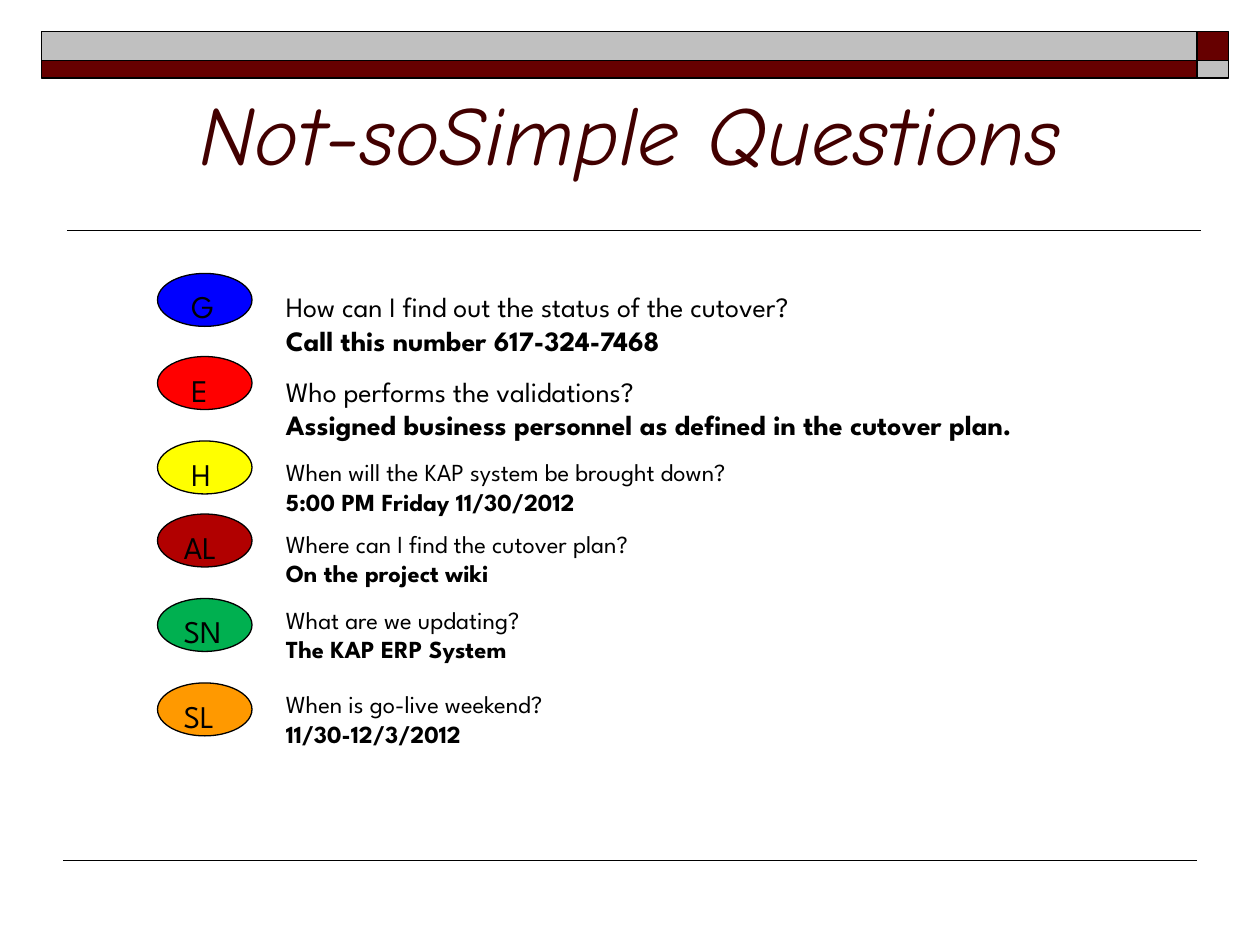
"""Build the cutover question-and-answer slide."""
from dataclasses import dataclass

from lxml import etree
from pptx import Presentation
from pptx import util as u
from pptx.dml.color import RGBColor
from pptx.enum import shapes, text
from pptx.oxml.ns import qn


@dataclass(frozen=True)
class Theme:
    """Colours, fonts and type sizes."""
    ink: str = "000000"
    maroon: str = "660000"
    silver: str = "C0C0C0"
    title_ink: str = "420000"
    title_font: str = "Comic Neue"
    body_font: str = "League Spartan"
    title_size: int = 48
    badge_size: int = 18
    large: int = 16
    small: int = 14


class SlideBuilder:
    """Draw styled elements on one slide."""

    def __init__(self, slide, theme):
        self.slide = slide
        self.theme = theme

    def add_run(self, paragraph, wording, size, font=None, color=None, bold=None, italic=None):
        """Append one styled run."""
        run = paragraph.add_run()
        run.text = wording
        run.font.size = u.Pt(size)
        run.font.name = font or self.theme.body_font
        run.font.color.rgb = RGBColor.from_string(color or self.theme.ink)
        run.font.bold = bold
        run.font.italic = italic

    def shape(self, kind, left, top, width, height, fill, weight):
        """Add an outlined, filled shape."""
        outline = self.slide.shapes.add_shape(kind, *map(u.Inches, (left, top, width, height)))
        outline.shadow.inherit = False
        outline.fill.solid()
        outline.fill.fore_color.rgb = RGBColor.from_string(fill)
        outline.line.color.rgb = RGBColor.from_string(self.theme.ink)
        outline.line.width = u.Pt(weight)
        return outline

    def rule(self, left, right, y, weight):
        """Add a horizontal line."""
        line = self.slide.shapes.add_connector(
            shapes.MSO_CONNECTOR.STRAIGHT, *map(u.Inches, (left, y, right, y)))
        line.line.color.rgb = RGBColor.from_string(self.theme.ink)
        line.line.width = u.Pt(weight)
        etree.SubElement(line._element.spPr, qn("a:effectLst"))

    def text_frame(self, left, top, width, height):
        """Add a wrapping text box and return its frame."""
        frame = self.slide.shapes.add_textbox(
            *map(u.Inches, (left, top, width, height))).text_frame
        frame.word_wrap = True
        return frame

    def title(self, wording):
        """Add the centred slide title."""
        frame = self.text_frame(0.5, 0.25, 9, 1.25)
        frame.vertical_anchor = text.MSO_ANCHOR.BOTTOM
        heading = frame.paragraphs[0]
        heading.alignment = text.PP_ALIGN.CENTER
        self.add_run(heading, wording, self.theme.title_size, self.theme.title_font,
                     self.theme.title_ink, italic=True)

    def badge(self, letters, top, fill):
        """Add a coloured category oval."""
        oval = self.shape(shapes.MSO_SHAPE.OVAL, 1.25, top, 0.75, 0.42, fill, 0.75)
        frame = oval.text_frame
        frame.vertical_anchor = text.MSO_ANCHOR.TOP
        frame.margin_left = u.Inches(0.16 if len(letters) == 1 else 0.1)
        label = frame.paragraphs[0]
        label.alignment = text.PP_ALIGN.LEFT
        self.add_run(label, letters, self.theme.badge_size)

    def question(self, top, size, query, answer):
        """Add a question with its bold answer below."""
        frame = self.text_frame(2.17, top, 7.33, 0.64 if size == self.theme.large else 0.57)
        self.add_run(frame.paragraphs[0], query, size)
        self.add_run(frame.add_paragraph(), answer, size, bold=True)


def main():
    """Compose and save the slide."""
    deck = Presentation()
    deck.slide_width, deck.slide_height = u.Inches(10), u.Inches(7.5)
    theme = Theme()
    builder = SlideBuilder(deck.slides.add_slide(deck.slide_layouts[6]), theme)

    builder.rule(0.53, 9.53, 1.83, 1)
    bands = ((0.25, 0.23, theme.silver, theme.maroon), (0.48, 0.14, theme.maroon, theme.silver))
    for top, height, bar, corner in bands:
        for left, width, fill in ((0.33, 9.17, bar), (9.5, 0.25, corner)):
            builder.shape(shapes.MSO_SHAPE.RECTANGLE, left, top, width, height, fill, 1)
    builder.rule(0.5, 9.5, 6.83, 0.75)
    builder.title("Not-soSimple Questions")

    categories = (
        ("G", 2.17, "0000FF", 2.25, theme.large,
         "How can I find out the status of the cutover?", "Call this number 617-324-7468"),
        ("E", 2.83, "FF0000", 2.92, theme.large, "Who performs the validations?",
         "Assigned business personnel as defined in the cutover plan."),
        ("H", 3.5, "FFFF00", 3.58, theme.small,
         "When will the KAP system be brought down?", "5:00 PM Friday 11/30/2012"),
        ("AL", 4.08, "B10000", 4.15, theme.small,
         "Where can I find the cutover plan?", "On the project wiki"),
        ("SN", 4.75, "00B050", 4.75, theme.small,
         "What are we updating?", "The KAP ERP System"),
        ("SL", 5.42, "FF9900", 5.42, theme.small,
         "When is go-live weekend?", "11/30-12/3/2012"),
    )
    for letters, badge_top, fill, question_top, size, query, answer in categories:
        builder.badge(letters, badge_top, fill)
        builder.question(question_top, size, query, answer)

    deck.save("out.pptx")


if __name__ == "__main__":
    main()
